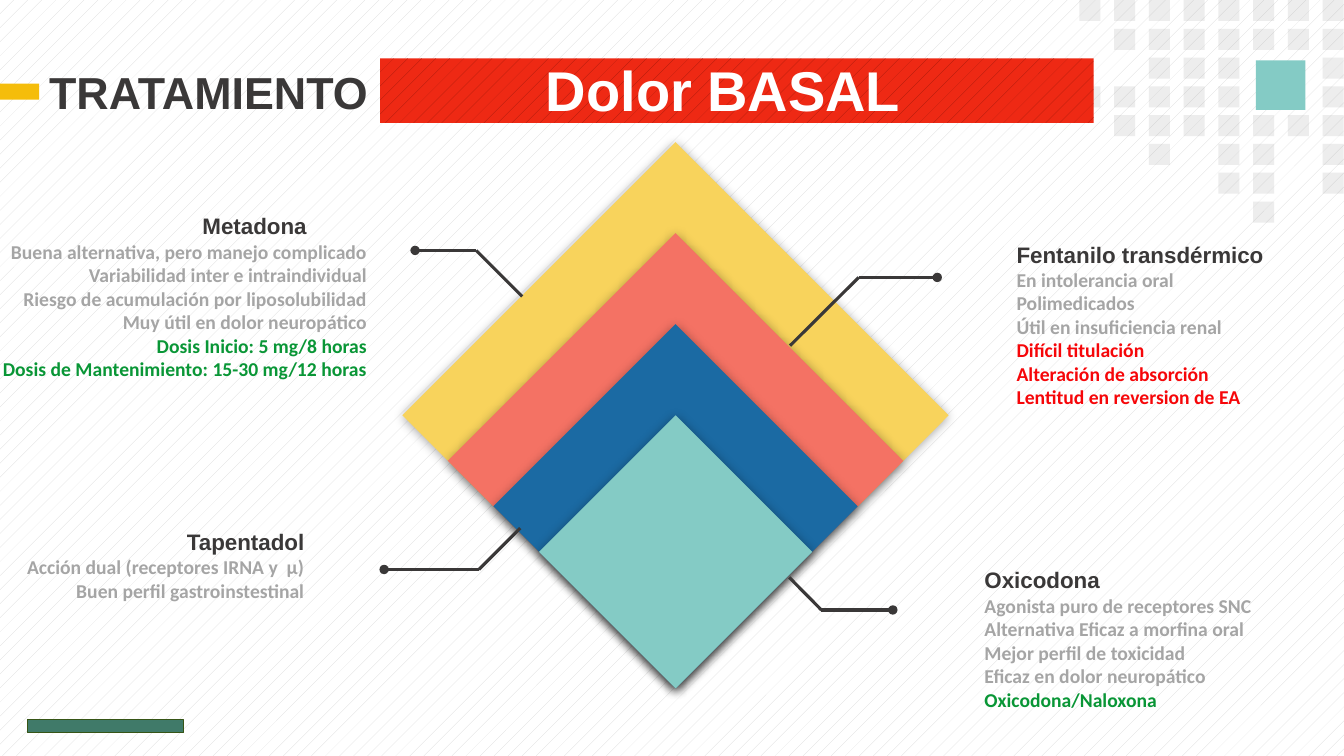
import pptx
import pptx.dml.color
import pptx.enum.dml
import pptx.enum.shapes
import pptx.enum.text
import pptx.oxml
import pptx.oxml.ns
import pptx.util

Cm = pptx.util.Cm
Pt = pptx.util.Pt
SHAPE = pptx.enum.shapes.MSO_SHAPE
ALIGN = pptx.enum.text.PP_ALIGN
NS = pptx.oxml.ns.nsdecls("a")

COLORS = {
    "white": "FFFFFF", "dots": "D9D9D9", "gray": "A5A5A5", "dark": "3A3838",
    "teal": "84CBC5", "blue": "1B6AA3", "coral": "F47264", "yellow": "F8D35C",
    "amber": "F5BD0B", "banner": "EE2914", "banner_dots": "A11A0B",
    "red": "F60609", "green": "099636", "bar": "407A69", "bar_edge": "365516",
}
SQUARE_ROWS = [
    "########",
    ".#######",
    "..###..#",
    "#####..#",
    ".#######",
    "..#.##.#",
    "....##.#",
    ".....#..",
]
CALLOUTS = [
    dict(box=(25.37, 5.94, 6.88, 4.53), heading="Fentanilo transdérmico",
         lines=[("En intolerancia oral", "gray"),
                ("Polimedicados", "gray"),
                ("Útil en insuficiencia renal", "gray"),
                ("Difícil titulación", "red"),
                ("Alteración de absorción", "red"),
                ("Lentitud en reversion de EA", "red")],
         leader=[(19.91, 8.71), (21.64, 6.99), (23.62, 6.99)]),
    dict(box=(24.56, 14.15, 7.72, 3.93), heading="Oxicodona",
         lines=[("Agonista puro de receptores SNC", "gray"),
                ("Alternativa Eficaz a morfina oral", "gray"),
                ("Mejor perfil de toxicidad", "gray"),
                ("Eficaz en dolor neuropático", "gray"),
                ("Oxicodona/Naloxona", "green")],
         leader=[(19.89, 14.55), (20.7, 15.37), (22.5, 15.37)]),
    dict(box=(-0.41, 5.23, 9.91, 5.74), heading="Metadona",
         lines=[("Buena alternativa, pero manejo complicado", "gray"),
                ("Variabilidad inter e intraindividual", "gray"),
                ("Riesgo de acumulación por liposolubilidad", "gray"),
                ("Muy útil en dolor neuropático", "gray"),
                ("Dosis Inicio: 5 mg/8 horas", "green"),
                ("Dosis de Mantenimiento: 15-30 mg/12 horas", "green")],
         leader=[(13.16, 7.47), (12, 6.31), (10.46, 6.31)],
         align=ALIGN.RIGHT, heading_inset=1.52),
    dict(box=(0, 13.18, 7.92, 2.13), heading="Tapentadol",
         lines=[("Acción dual (receptores IRNA y  µ)", "gray"),
                ("Buen perfil gastroinstestinal", "gray")],
         leader=[(13.11, 13.31), (12.07, 14.35), (9.68, 14.35)],
         align=ALIGN.RIGHT),
]


def rgb(name):
    return pptx.dml.color.RGBColor.from_string(COLORS[name])


def add_block(s, kind, box, color):
    sp = s.shapes.add_shape(kind, *map(Cm, box))
    sp.shadow.inherit = False
    sp.fill.solid()
    sp.fill.fore_color.rgb = rgb(color)
    sp.line.fill.background()
    return sp


def add_text(s, box, lines, size, font="Arial", align=ALIGN.LEFT, spacing=None):
    tf = s.shapes.add_textbox(*map(Cm, box)).text_frame
    tf.word_wrap = True
    for i, (text, color) in enumerate(lines):
        p = tf.paragraphs[0] if i == 0 else tf.add_paragraph()
        p.alignment = align
        p.line_spacing = spacing
        r = p.add_run()
        r.text = text
        r.font.name = font
        r.font.size = Pt(size)
        r.font.bold = True
        r.font.color.rgb = rgb(color)


def set_dots(fill, fore, back):
    fill.patterned()
    fill.pattern = pptx.enum.dml.MSO_PATTERN.PERCENT_5
    fill.fore_color.rgb = rgb(fore)
    fill.back_color.rgb = rgb(back)


def draw_squares(s, box):
    left, top, width, height = box
    side = 0.53
    dx = (width - side) / (len(SQUARE_ROWS[0]) - 1)
    dy = (height - side) / (len(SQUARE_ROWS) - 1)
    for i, row in enumerate(SQUARE_ROWS):
        for j, mark in enumerate(row):
            if mark == "#":
                place = (left + j * dx, top + i * dy, side, side)
                sp = add_block(s, SHAPE.RECTANGLE, place, "gray")
                clr = sp._element.spPr.find(".//" + pptx.oxml.ns.qn("a:srgbClr"))
                clr.append(pptx.oxml.parse_xml(f'<a:alpha {NS} val="20000"/>'))


def draw_footer_bar(s, box):
    sp = add_block(s, SHAPE.RECTANGLE, box, "bar")
    sp.line.color.rgb = rgb("bar_edge")
    sp.line.width = Pt(0.75)


def draw_header(s, box):
    left, top, width, height = box
    add_text(s, (left + 0.99, top + 0.04, 9.91, height),
             [("TRATAMIENTO", "dark")], 32)
    add_block(s, SHAPE.RECTANGLE, (left, top + 0.64, 0.99, 0.4), "amber")
    banner = add_block(s, SHAPE.RECTANGLE,
                       (left + 9.58, top, width - 9.58, height), "banner")
    set_dots(banner.fill, "banner_dots", "banner")
    add_text(s, (left + 13.51, top, 10.74, 2.08),
             [("Dolor BASAL", "white")], 40, spacing=0.9)


def draw_diamonds(s, box):
    left, top, width, height = box
    for i, color in enumerate(["yellow", "coral", "blue", "teal"]):
        k = 1 - i / 6
        place = (left + width * (1 - k) / 2, top + height * (1 - k),
                 width * k, height * k)
        sp = add_block(s, SHAPE.DIAMOND, place, color)
        effects = sp._element.spPr.find(pptx.oxml.ns.qn("a:effectLst"))
        effects.append(pptx.oxml.parse_xml(
            f'<a:outerShdw {NS} blurRad="101600" dist="12700" dir="5400000">'
            '<a:srgbClr val="000000"><a:alpha val="35000"/></a:srgbClr>'
            '</a:outerShdw>'))


def draw_leader(s, points):
    for start, end in zip(points, points[1:]):
        line = s.shapes.add_connector(pptx.enum.shapes.MSO_CONNECTOR.STRAIGHT,
                                      *map(Cm, start + end))
        line.line.color.rgb = rgb("dark")
        line.line.width = Pt(2.25)
        if end == points[-1]:
            line.line._get_or_add_ln().append(
                pptx.oxml.parse_xml(f'<a:tailEnd {NS} type="oval"/>'))
        line._element.spPr.append(pptx.oxml.parse_xml(f'<a:effectLst {NS}/>'))


def draw_callout(s, box, heading, lines, leader, align=ALIGN.LEFT, heading_inset=0):
    left, top, width, height = box
    draw_leader(s, leader)
    add_text(s, (left, top, width - heading_inset, 0.94),
             [(heading, "dark")], 16, align=align)
    add_text(s, (left, top + 0.68, width, height - 0.68),
             lines, 14, "Calibri", align)


def main():
    prs = pptx.Presentation()
    prs.slide_width = Cm(33.87)
    prs.slide_height = Cm(19.05)
    s = prs.slides.add_slide(prs.slide_layouts[6])
    set_dots(s.background.fill, "dots", "white")
    add_block(s, SHAPE.RECTANGLE, (31.65, 1.52, 1.25, 1.25), "teal")
    draw_squares(s, (27.2, 0, 6.66, 5.61))
    draw_footer_bar(s, (0.69, 18.14, 3.94, 0.33))
    draw_header(s, (0, 1.47, 27.56, 1.63))
    draw_diamonds(s, (10.14, 3.58, 13.77, 13.77))
    for callout in CALLOUTS:
        draw_callout(s, **callout)
    prs.save("out.pptx")


if __name__ == "__main__":
    main()
